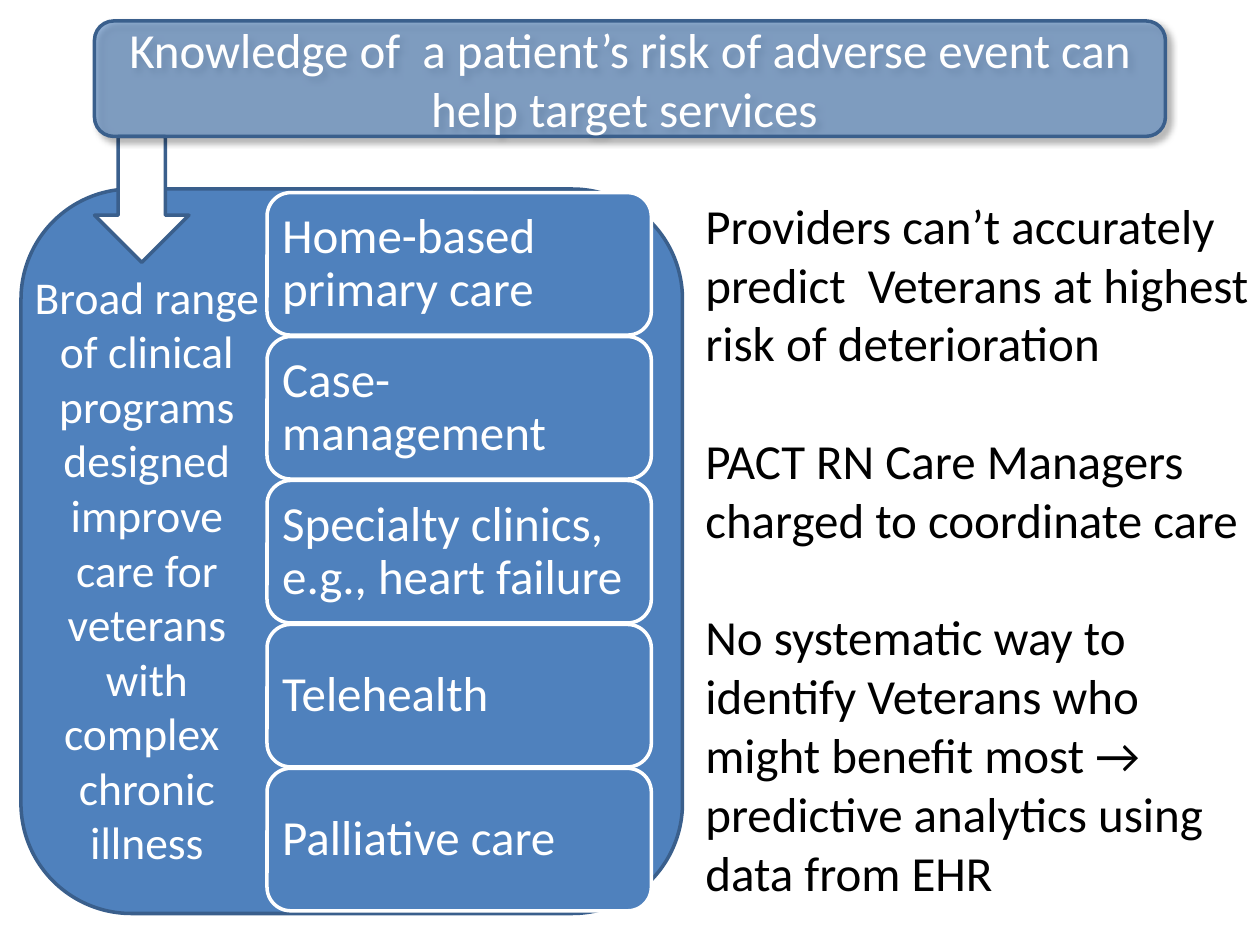
from lxml.etree import SubElement
from pptx import Presentation
from pptx.dml.color import RGBColor
from pptx.enum.shapes import MSO_SHAPE as Shape
from pptx.enum.text import MSO_ANCHOR as Anchor, PP_ALIGN as Align
from pptx.oxml import parse_xml
from pptx.oxml.ns import nsdecls, qn
from pptx.util import Pt

BLUE = RGBColor(0x4F, 0x81, 0xBD)
OUTLINE = RGBColor(0x3A, 0x5F, 0x8C)
WHITE = RGBColor(0xFF, 0xFF, 0xFF)
BLACK = RGBColor(0, 0, 0)

TITLE = "Knowledge of  a patient’s risk of adverse event can help target services "
SUMMARY = ("Broad range of clinical programs designed improve care for "
           "veterans with complex  chronic illness")
PROGRAMS = [
    "Home-based primary care",
    "Case-management",
    "Specialty clinics, e.g., heart failure",
    "Telehealth",
    "Palliative care",
]
POINTS = [
    ["Providers can’t accurately",
     "predict  Veterans at highest risk of deterioration"],
    ["PACT RN Care Managers charged to coordinate care"],
    ["No systematic way to identify Veterans who might benefit most → "
     "predictive analytics using data from EHR"],
]

PROGRAM_TOP, PROGRAM_PITCH, PROGRAM_HEIGHT = 110.1, 82.25, 81.4
POINT_GAP = 33.6
SHADOW = """<a:effectLst %s><a:outerShdw blurRad="50800" dist="38100" dir="2700000"
 algn="tl" rotWithShape="0"><a:srgbClr val="000000"><a:alpha val="40000"/></a:srgbClr>
 </a:outerShdw></a:effectLst>""" % nsdecls("a")


def add_box(slide, kind, left, top, width, height, fill, line):
    shape = slide.shapes.add_shape(kind, Pt(left), Pt(top), Pt(width), Pt(height))
    shape.shadow.inherit = False
    shape.fill.solid()
    shape.fill.fore_color.rgb = fill
    shape.line.color.rgb = line
    shape.line.width = Pt(2)
    return shape


def add_text(slide, left, top, width, height):
    box = slide.shapes.add_textbox(Pt(left), Pt(top), Pt(width), Pt(height))
    box.text_frame.word_wrap = True
    return box.text_frame


def write(paragraph, text, size, color, align=Align.LEFT):
    paragraph.text = text
    paragraph.alignment = align
    for run in paragraph.runs:
        run.font.name = "Calibri"
        run.font.size = Pt(size)
        run.font.color.rgb = color


def add_points(slide):
    frame = add_text(slide, 396, 108, 330, 414.5)
    lines = [(text, group > 0 and index == 0)
             for group, texts in enumerate(POINTS)
             for index, text in enumerate(texts)]
    for index, (text, starts_group) in enumerate(lines):
        paragraph = frame.add_paragraph() if index else frame.paragraphs[0]
        write(paragraph, text, 28, BLACK)
        if starts_group:
            paragraph.space_before = Pt(POINT_GAP)


def add_programs(slide):
    for index, text in enumerate(PROGRAMS):
        shape = add_box(slide, Shape.ROUNDED_RECTANGLE, 152.6,
                        PROGRAM_TOP + index * PROGRAM_PITCH,
                        219.6, PROGRAM_HEIGHT, BLUE, WHITE)
        frame = shape.text_frame
        frame.word_wrap = True
        frame.vertical_anchor = Anchor.MIDDLE
        frame.margin_left = frame.margin_right = Pt(4.7)
        frame.margin_top = frame.margin_bottom = Pt(4.7)
        write(frame.paragraphs[0], text, 28, WHITE)
        frame.paragraphs[0].line_spacing = 0.9


def add_title(slide):
    shape = add_box(slide, Shape.ROUNDED_RECTANGLE, 54, 12, 612, 66, BLUE, OUTLINE)
    color = shape.fill._xPr.find(qn("a:solidFill"))[0]
    SubElement(color, qn("a:alpha"), val="59000")
    properties = shape._element.spPr
    properties.replace(properties.find(qn("a:effectLst")), parse_xml(SHADOW))
    frame = shape.text_frame
    frame.word_wrap = True
    frame.vertical_anchor = Anchor.MIDDLE
    write(frame.paragraphs[0], TITLE, 28, WHITE, Align.CENTER)


def main():
    presentation = Presentation()
    presentation.slide_width, presentation.slide_height = Pt(720), Pt(540)
    slide = presentation.slides.add_slide(presentation.slide_layouts[6])
    add_box(slide, Shape.ROUNDED_RECTANGLE, 12, 108, 378, 414, BLUE, OUTLINE)
    add_points(slide)
    add_programs(slide)
    summary = add_text(slide, 12, 150, 144, 353.5)
    write(summary.paragraphs[0], SUMMARY, 26, WHITE, Align.CENTER)
    add_box(slide, Shape.DOWN_ARROW, 54, 78, 54, 72, WHITE, OUTLINE)
    add_title(slide)
    presentation.save("out.pptx")


if __name__ == "__main__":
    main()
